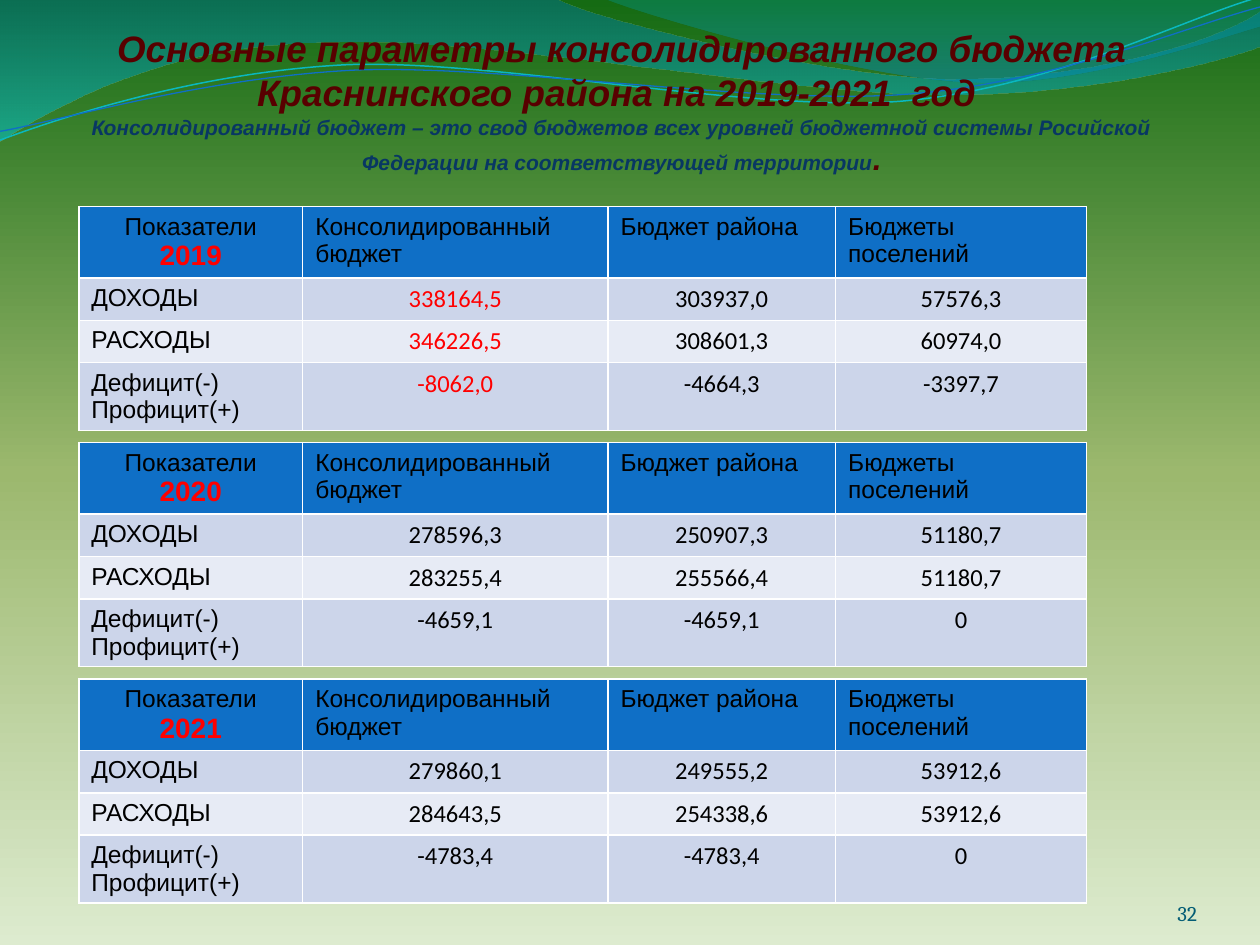
import pptx
import pptx.dml.color
import pptx.enum.text
import pptx.oxml
import pptx.oxml.ns
import pptx.util

Pt = pptx.util.Pt
RGB = pptx.dml.color.RGBColor
ALIGN = pptx.enum.text.PP_ALIGN
qn = pptx.oxml.ns.qn

MAROON = RGB(0x58, 0x00, 0x00)
NAVY = RGB(0x08, 0x37, 0x63)
TEAL = RGB(0x04, 0x5D, 0x75)
RED = RGB(0xFF, 0x00, 0x00)
BLACK = RGB(0x00, 0x00, 0x00)
WHITE = RGB(0xFF, 0xFF, 0xFF)
BLUE = RGB(0x0F, 0x6F, 0xC6)
CYAN = RGB(0x0A, 0xB8, 0xBF)
BAND_DARK = RGB(0xCC, 0xD5, 0xEA)
BAND_LIGHT = RGB(0xE7, 0xEB, 0xF5)

# Gradient stops: position %, colour, opacity %
BACKGROUND = [(0, RGB(0xDD, 0xEB, 0xCF), 100), (50, RGB(0x9C, 0xB8, 0x6E), 100),
              (100, RGB(0x15, 0x6B, 0x13), 100)]
WIDE_WAVE_FILL = [(0, RGB(0x00, 0x74, 0xA1), 45), (100, RGB(0x00, 0xC6, 0xCF), 55)]
RIGHT_WAVE_FILL = [(0, RGB(0x00, 0xA1, 0xA9), 30), (80, RGB(0x00, 0x8B, 0xBF), 45)]

# Paths: a pair of numbers is a line end, six numbers are a Bezier segment
WIDE_WAVE = [(0, -1), (317, -1), (343, 12, 478, 45, 546, 45), (614, 45, 690, 27, 720, 6.5),
             (721, 26), (708, 32, 626, 55, 537, 54), (448, 54, 275, 20, 185, 24),
             (93, 25, 33, 60, -1, 81)]
RIGHT_WAVE = [(345, -1), (366, 8, 491, 45, 554, 47), (616, 50, 692, 23, 720, 15), (720, 0)]
CYAN_CURVE = [(-1.4, 63.1), (34.1, 51.7, 114.3, 29.4, 199.4, 29.4),
              (284.4, 30.5, 425.9, 67.2, 512.1, 65.2), (599.3, 62.3, 676.1, 25.9, 720.6, 15.5)]
BLUE_CURVE = [(-1.1, 58.1), (33.1, 53.7, 118.2, 32.6, 204.3, 32.7),
              (290.3, 33.7, 429.1, 63.3, 515.3, 61.4), (601.5, 59.4, 678.9, 30, 721.4, 21)]
CURVE_ROTATION = 357.3

LEFT, TABLE_TOP, TABLE_STEP = 45, 118, 135
COL_WIDTHS = [128, 174.4, 130.1, 143.5]
ROW_HEIGHTS = [26.6, 18, 18, 28.8]
HEADERS = ["Консолидированный  бюджет", "Бюджет района", "Бюджеты поселений"]
ROW_LABELS = [["ДОХОДЫ"], ["РАСХОДЫ"], ["Дефицит(-)", "Профицит(+)"]]
BUDGETS = {
    "2019": [["338164,5", "303937,0", "57576,3"],
             ["346226,5", "308601,3", "60974,0"],
             ["-8062,0", "-4664,3", "-3397,7"]],
    "2020": [["278596,3", "250907,3", "51180,7"],
             ["283255,4", "255566,4", "51180,7"],
             ["-4659,1", "-4659,1", "0"]],
    "2021": [["279860,1", "249555,2", "53912,6"],
             ["284643,5", "254338,6", "53912,6"],
             ["-4783,4", "-4783,4", "0"]],
}

LABEL = dict(name="Arial", size=Pt(14), bold=False)
VALUE = dict(LABEL, name="Calibri")
YEAR = dict(name="Arial", size=Pt(16), bold=True)


def add_run(p, text, color, **fmt):
    r = p.add_run()
    r.text = text
    for name, value in fmt.items():
        setattr(r.font, name, value)
    r.font.color.rgb = color


def gradient(parent, stops, angle):
    """Replace the solid fill of a bgPr or spPr; angle is clockwise in degrees."""
    gs = "".join(
        f'<a:gs pos="{pos * 1000}"><a:srgbClr val="{color}">'
        f'<a:alpha val="{opacity * 1000}"/></a:srgbClr></a:gs>'
        for pos, color, opacity in stops)
    fill = pptx.oxml.parse_xml(
        f'<a:gradFill {pptx.oxml.ns.nsdecls("a")} rotWithShape="1"><a:gsLst>{gs}</a:gsLst>'
        f'<a:lin ang="{angle * 60000}" scaled="0"/></a:gradFill>')
    parent.replace(parent.find(qn("a:solidFill")), fill)


def add_path(s, segments, close):
    """Build the outline through all points, then join triples into Bezier segments."""
    pts = [(seg[i] * 10, seg[i + 1] * 10) for seg in segments for i in range(0, len(seg), 2)]
    builder = s.shapes.build_freeform(*pts[0], scale=Pt(0.1))
    builder.add_line_segments(pts[1:], close=close)
    sp = builder.convert_to_shape()
    sp.shadow.inherit = False
    lines = iter(list(sp._element.iter(qn("a:lnTo"))))
    for seg in segments[1:]:
        first = next(lines)
        if len(seg) == 6:
            first.tag = qn("a:cubicBezTo")
            for _ in range(2):
                extra = next(lines)
                first.append(extra[0])
                extra.getparent().remove(extra)
    return sp


def add_wave(s, segments, stops):
    sp = add_path(s, segments, True)
    sp.line.fill.background()
    sp.fill.solid()
    gradient(sp._element.spPr, stops, 90)


def add_curve(s, segments, color, width):
    sp = add_path(s, segments, False)
    sp.rotation = CURVE_ROTATION
    sp.fill.background()
    sp.line.color.rgb = color
    sp.line.width = Pt(width)


def format_frame(tf, top_inset):
    for name, value in dict(margin_left=0, margin_right=0, margin_bottom=0,
                            margin_top=Pt(top_inset), word_wrap=True,
                            vertical_anchor=pptx.enum.text.MSO_ANCHOR.BOTTOM,
                            auto_size=pptx.enum.text.MSO_AUTO_SIZE.NONE).items():
        setattr(tf, name, value)


def set_title(s):
    title = s.shapes.title
    s.shapes._spTree.append(title._element)  # in front of the waves
    title.left, title.top, title.width, title.height = map(Pt, (LEFT, 0, 620.6, 101.2))
    tf = title.text_frame
    format_frame(tf, 3.6)
    style = dict(name="Arial", bold=True, italic=True)
    paragraphs = [
        [("Основные параметры консолидированного бюджета", 21, MAROON)],
        [("Краснинского района на 2019-2021  год ", 21, MAROON)],
        [("Консолидированный бюджет – это свод бюджетов всех уровней бюджетной системы "
          "Росийской Федерации на соответствующей территории", 12, NAVY),
         (".", 18, MAROON)],
    ]
    for i, runs in enumerate(paragraphs):
        p = tf.add_paragraph() if i else tf.paragraphs[0]
        p.alignment = ALIGN.CENTER
        for text, size, color in runs:
            add_run(p, text, color, size=Pt(size), **style)


def set_borders(cell):
    tcPr = cell._tc.get_or_add_tcPr()
    for i, side in enumerate(("lnL", "lnR", "lnT", "lnB")):
        tcPr.insert(i, pptx.oxml.parse_xml(
            f'<a:{side} {pptx.oxml.ns.nsdecls("a")} w="{Pt(1)}"><a:solidFill>'
            f'<a:srgbClr val="{WHITE}"/></a:solidFill></a:{side}>'))


def fill_cell(cell, lines, align, fill):
    """Each line is (text, colour, format)."""
    cell.fill.solid()
    cell.fill.fore_color.rgb = fill
    set_borders(cell)
    tf = cell.text_frame
    for i, (text, color, fmt) in enumerate(lines):
        p = tf.add_paragraph() if i else tf.paragraphs[0]
        p.alignment = align
        add_run(p, text, color, **fmt)


def add_budget_table(s, top, year, values, total_color):
    table = s.shapes.add_table(4, 4, Pt(LEFT), Pt(top),
                               Pt(sum(COL_WIDTHS)), Pt(sum(ROW_HEIGHTS))).table
    for col, width in zip(table.columns, COL_WIDTHS):
        col.width = Pt(width)
    for row, height in zip(table.rows, ROW_HEIGHTS):
        row.height = Pt(height)
    fill_cell(table.cell(0, 0), [("Показатели", BLACK, LABEL), (year, RED, YEAR)],
              ALIGN.CENTER, BLUE)
    for c, text in enumerate(HEADERS, 1):
        fill_cell(table.cell(0, c), [(text, BLACK, LABEL)], ALIGN.LEFT, BLUE)
    for r, (label, row) in enumerate(zip(ROW_LABELS, values), 1):
        band = BAND_DARK if r % 2 else BAND_LIGHT
        fill_cell(table.cell(r, 0), [(t, BLACK, LABEL) for t in label], ALIGN.LEFT, band)
        for c, text in enumerate(row, 1):
            color = total_color if c == 1 else BLACK
            fill_cell(table.cell(r, c), [(text, color, VALUE)], ALIGN.CENTER, band)


def add_page_number(s, number):
    sp = s.shapes.add_textbox(Pt(624), Pt(500.4), Pt(60), Pt(28.8))
    format_frame(sp.text_frame, 0)
    p = sp.text_frame.paragraphs[0]
    p.alignment = ALIGN.RIGHT
    add_run(p, number, TEAL, name="Cambria", size=Pt(12))


def main():
    prs = pptx.Presentation()
    prs.slide_width, prs.slide_height = Pt(720), Pt(540)
    s = prs.slides.add_slide(prs.slide_layouts[5])
    s.background.fill.solid()
    gradient(s.background._cSld.bg.bgPr, BACKGROUND, 270)
    add_wave(s, WIDE_WAVE, WIDE_WAVE_FILL)
    add_wave(s, RIGHT_WAVE, RIGHT_WAVE_FILL)
    add_curve(s, CYAN_CURVE, CYAN, 0.85)
    add_curve(s, BLUE_CURVE, BLUE, 0.75)
    set_title(s)
    for i, (year, values) in enumerate(BUDGETS.items()):
        add_budget_table(s, TABLE_TOP + i * TABLE_STEP, year, values,
                         RED if year == "2019" else BLACK)
    add_page_number(s, "32")
    prs.save("out.pptx")


if __name__ == "__main__":
    main()
